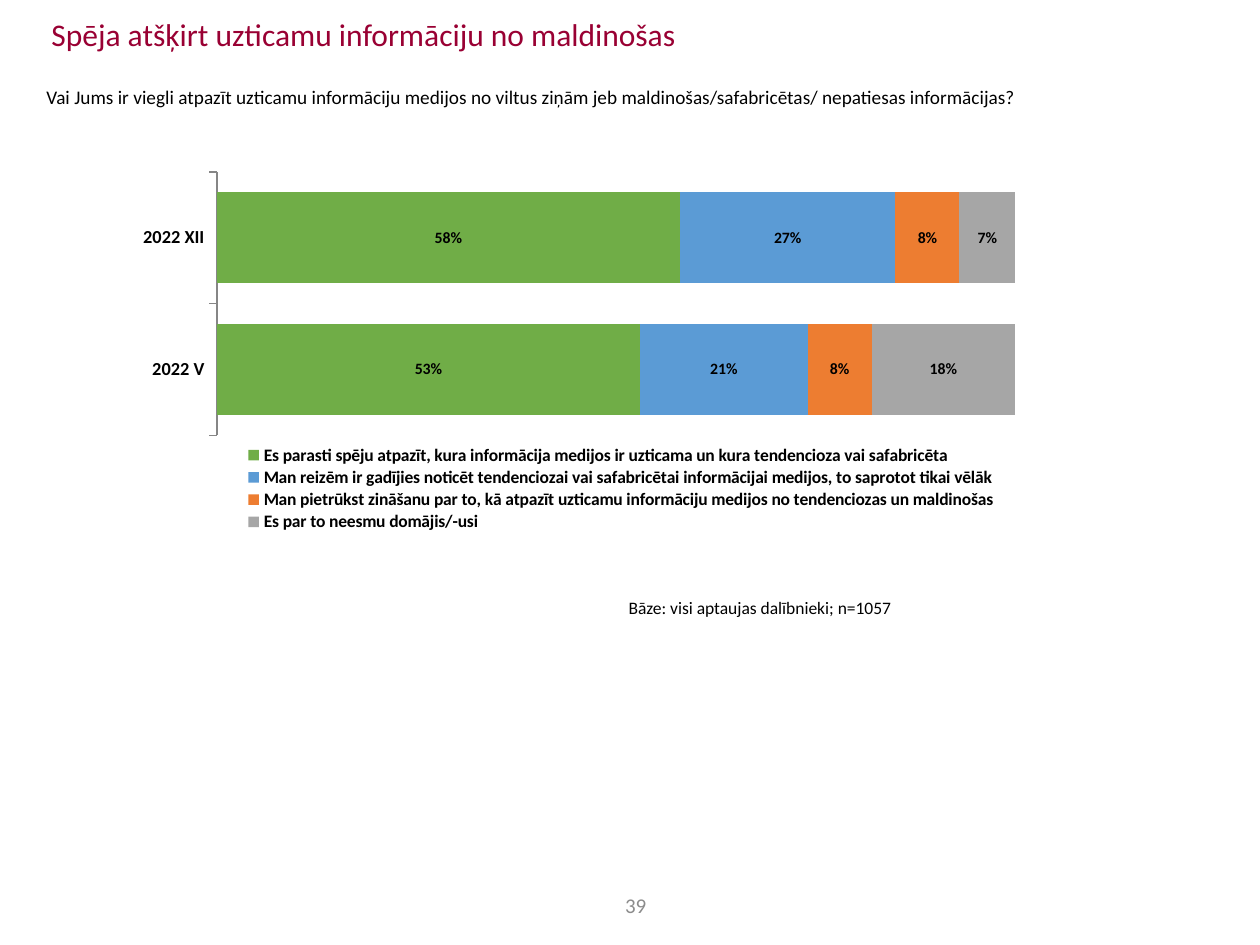
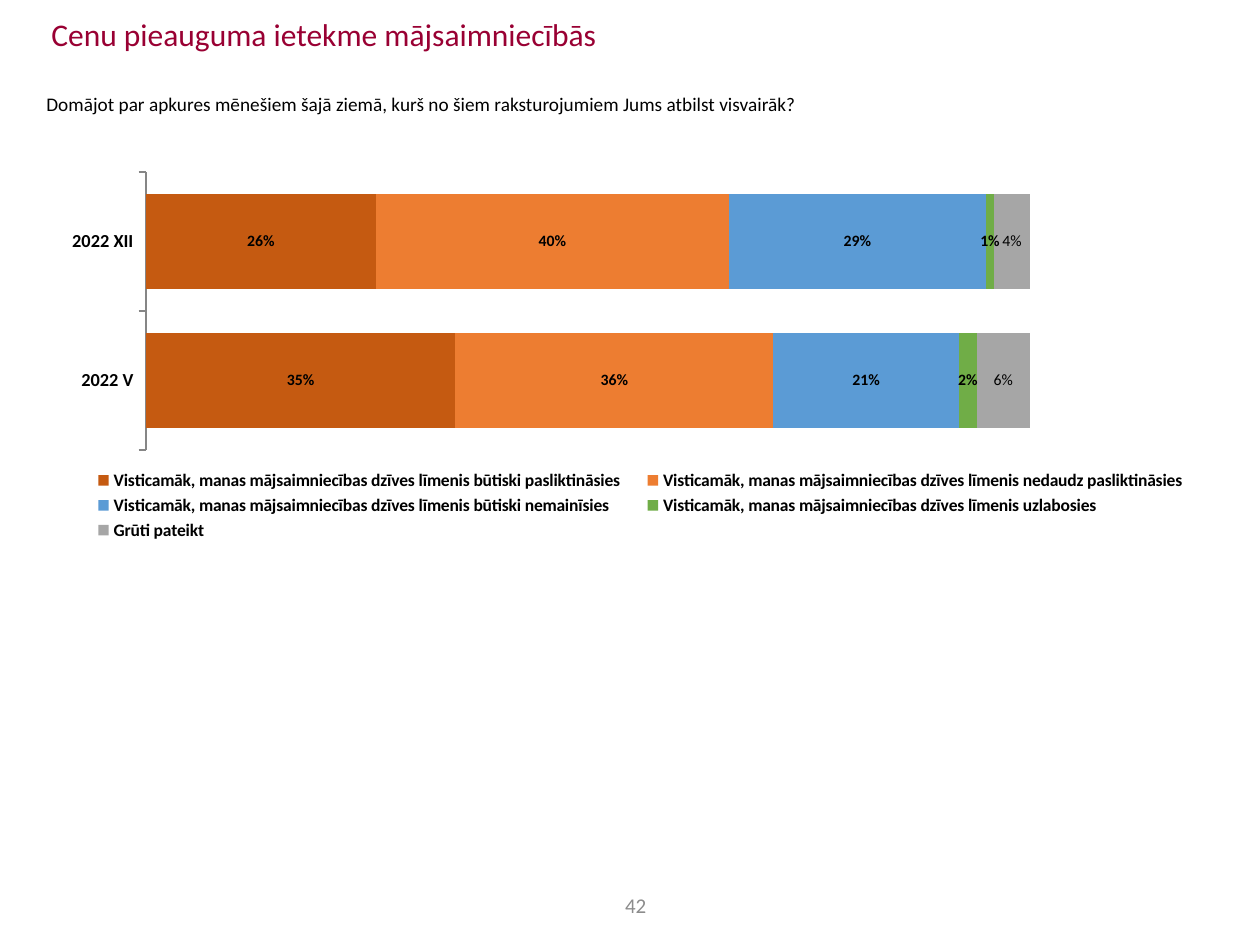
from dataclasses import dataclass
from typing import NamedTuple, Optional

from lxml.etree import SubElement
from pptx import Presentation
from pptx.chart.chart import Chart
from pptx.chart.data import CategoryChartData
from pptx.dml.color import RGBColor
from pptx.enum.chart import XL_CHART_TYPE, XL_LEGEND_POSITION, XL_TICK_MARK
from pptx.enum.text import MSO_ANCHOR, PP_ALIGN
from pptx.oxml import parse_xml
from pptx.oxml.ns import nsdecls, qn
from pptx.slide import Slide
from pptx.util import Inches, Pt

SLIDE_W, SLIDE_H = Inches(10), Inches(7.5)


@dataclass(frozen=True)
class Theme:
    font: str = "Calibri"
    title: str = "990033"
    text: str = "000000"
    page: str = "8C8C8C"
    axis: str = "868686"
    green: str = "70AD47"
    blue: str = "5B9BD5"
    orange: str = "ED7D31"
    rust: str = "C55A11"
    grey: str = "A6A6A6"
    title_size: float = 18
    page_size: float = 12
    question_size: float = 11
    category_size: float = 10.5
    small_size: float = 10
    label_size: float = 9


T = Theme()


class Box(NamedTuple):
    """Left, top, width and height as percentages of the slide."""
    x: float
    y: float
    w: float
    h: float

    def emu(self) -> tuple[int, int, int, int]:
        return (int(SLIDE_W * self.x / 100), int(SLIDE_H * self.y / 100),
                int(SLIDE_W * self.w / 100), int(SLIDE_H * self.h / 100))


class Area(NamedTuple):
    """Left, top, width and height as shares of the chart."""
    x: float
    y: float
    w: float
    h: float


class Answer(NamedTuple):
    name: str
    may: float
    december: float
    color: str
    bold: bool = True


@dataclass(frozen=True)
class Survey:
    title: str
    question: str
    question_top: float
    page: int
    chart: Box
    plot: Area
    legend: Area
    answers: tuple[Answer, ...]
    base: Optional[str] = None


PERIODS = ("2022 V", "2022 XII")
TITLE_BOX = Box(3.1, 0.93, 93.7, 5.87)
BASE_BOX = Box(48.9, 62.53, 23.1, 3.6)
PAGE_BOX = Box(47.7, 93.87, 5.5, 3.73)

SURVEYS = (
    Survey(
        title="Spēja atšķirt uzticamu informāciju no maldinošas",
        question="Vai Jums ir viegli atpazīt uzticamu informāciju medijos no viltus ziņām "
                 "jeb maldinošas/safabricētas/ nepatiesas informācijas?",
        question_top=8.4,
        page=39,
        chart=Box(10.1, 18.13, 71.2, 38.8),
        plot=Area(0.1, 0, 0.89, 0.72),
        legend=Area(0.12, 0.74, 0.86, 0.25),
        answers=(
            Answer("Es parasti spēju atpazīt, kura informācija medijos ir uzticama "
                   "un kura tendencioza vai safabricēta", 0.53, 0.58, T.green),
            Answer("Man reizēm ir gadījies noticēt tendenciozai vai safabricētai "
                   "informācijai medijos, to saprotot tikai vēlāk", 0.21, 0.27, T.blue),
            Answer("Man pietrūkst zināšanu par to, kā atpazīt uzticamu informāciju "
                   "medijos no tendenciozas un maldinošas", 0.08, 0.08, T.orange),
            Answer("Es par to neesmu domājis/-usi", 0.18, 0.07, T.grey),
        ),
        base="Bāze: visi aptaujas dalībnieki; n=1057",
    ),
    Survey(
        title="Cenu pieauguma ietekme mājsaimniecībās",
        question="Domājot par apkures mēnešiem šajā ziemā, kurš no šiem raksturojumiem "
                 "Jums atbilst visvairāk?",
        question_top=9.07,
        page=42,
        chart=Box(4.2, 18.13, 92.3, 40.4),
        plot=Area(0.08, 0, 0.76, 0.73),
        legend=Area(0.02, 0.77, 0.97, 0.21),
        answers=(
            Answer("Visticamāk, manas mājsaimniecības dzīves līmenis būtiski pasliktināsies",
                   0.35, 0.26, T.rust),
            Answer("Visticamāk, manas mājsaimniecības dzīves līmenis nedaudz pasliktināsies",
                   0.36, 0.4, T.orange),
            Answer("Visticamāk, manas mājsaimniecības dzīves līmenis būtiski nemainīsies",
                   0.21, 0.29, T.blue),
            Answer("Visticamāk, manas mājsaimniecības dzīves līmenis uzlabosies",
                   0.02, 0.01, T.green),
            Answer("Grūti pateikt", 0.06, 0.04, T.grey, bold=False),
        ),
    ),
)


def style_font(font, size: float, color: str = T.text, bold: bool = False) -> None:
    font.name, font.size, font.bold = T.font, Pt(size), bold
    font.color.rgb = RGBColor.from_string(color)


def add_text(s: Slide, box: Box, text: str, *, size: float, color: str = T.text,
             align: PP_ALIGN = PP_ALIGN.LEFT, anchor: MSO_ANCHOR = MSO_ANCHOR.TOP,
             wrap: bool = True) -> None:
    tf = s.shapes.add_textbox(*box.emu()).text_frame
    tf.word_wrap, tf.vertical_anchor = wrap, anchor
    p = tf.paragraphs[0]
    p.alignment = align
    r = p.add_run()
    r.text = text
    style_font(r.font, size, color)


def place(element, area: Area, index: int, inner: bool = False) -> None:
    """Give a plot area or legend a fixed place inside its chart."""
    for old in element.findall(qn("c:layout")):
        element.remove(old)
    layout = parse_xml(f"<c:layout {nsdecls('c')}><c:manualLayout/></c:layout>")
    values = {"layoutTarget": "inner"} if inner else {}
    values |= {"xMode": "edge", "yMode": "edge"} | area._asdict()
    for tag, value in values.items():
        SubElement(layout[0], qn(f"c:{tag}")).set("val", str(value))
    element.insert(index, layout)


def style_axes(chart: Chart) -> None:
    axis = chart.category_axis
    axis.major_tick_mark = XL_TICK_MARK.OUTSIDE
    axis.minor_tick_mark = XL_TICK_MARK.NONE
    axis.format.line.color.rgb = RGBColor.from_string(T.axis)
    axis.format.line.width = Pt(0.75)
    style_font(axis.tick_labels.font, T.category_size, bold=True)
    chart.value_axis.has_major_gridlines = False
    chart.value_axis.visible = False


def add_answer_chart(s: Slide, survey: Survey) -> None:
    data = CategoryChartData(number_format="0%")
    data.categories = PERIODS
    for answer in survey.answers:
        data.add_series(answer.name, (answer.may, answer.december))
    chart = s.shapes.add_chart(XL_CHART_TYPE.BAR_STACKED_100, *survey.chart.emu(), data).chart
    chart.has_title = False
    style_font(chart.font, T.title_size)
    style_axes(chart)

    # Bars and their labels
    plot = chart.plots[0]
    plot.gap_width, plot.overlap, plot.vary_by_categories = 45, 100, False
    for series, answer in zip(plot.series, survey.answers):
        series.format.fill.solid()
        series.format.fill.fore_color.rgb = RGBColor.from_string(answer.color)
        labels = series.data_labels
        labels.show_value = True
        labels.number_format, labels.number_format_is_linked = "0%", False
        style_font(labels.font, T.label_size, bold=answer.bold)

    # Legend below the bars
    chart.has_legend = True
    chart.legend.position = XL_LEGEND_POSITION.RIGHT
    chart.legend.include_in_layout = False
    style_font(chart.legend.font, T.small_size, bold=True)
    place(chart.legend._element, survey.legend, 1)
    place(chart._chartSpace.chart.plotArea, survey.plot, 0, inner=True)


def add_survey(prs: Presentation, survey: Survey) -> None:
    s = prs.slides.add_slide(prs.slide_layouts[6])
    add_answer_chart(s, survey)
    add_text(s, Box(2.7, survey.question_top, 95.6, 3.47), survey.question,
             size=T.question_size)
    add_text(s, TITLE_BOX, survey.title, size=T.title_size, color=T.title)
    if survey.base:
        add_text(s, BASE_BOX, survey.base, size=T.small_size, wrap=False)
    add_text(s, PAGE_BOX, str(survey.page), size=T.page_size, color=T.page,
             align=PP_ALIGN.CENTER, anchor=MSO_ANCHOR.MIDDLE)


def main() -> None:
    prs = Presentation()
    prs.slide_width, prs.slide_height = SLIDE_W, SLIDE_H
    for survey in SURVEYS:
        add_survey(prs, survey)
    prs.save("out.pptx")


if __name__ == "__main__":
    main()
